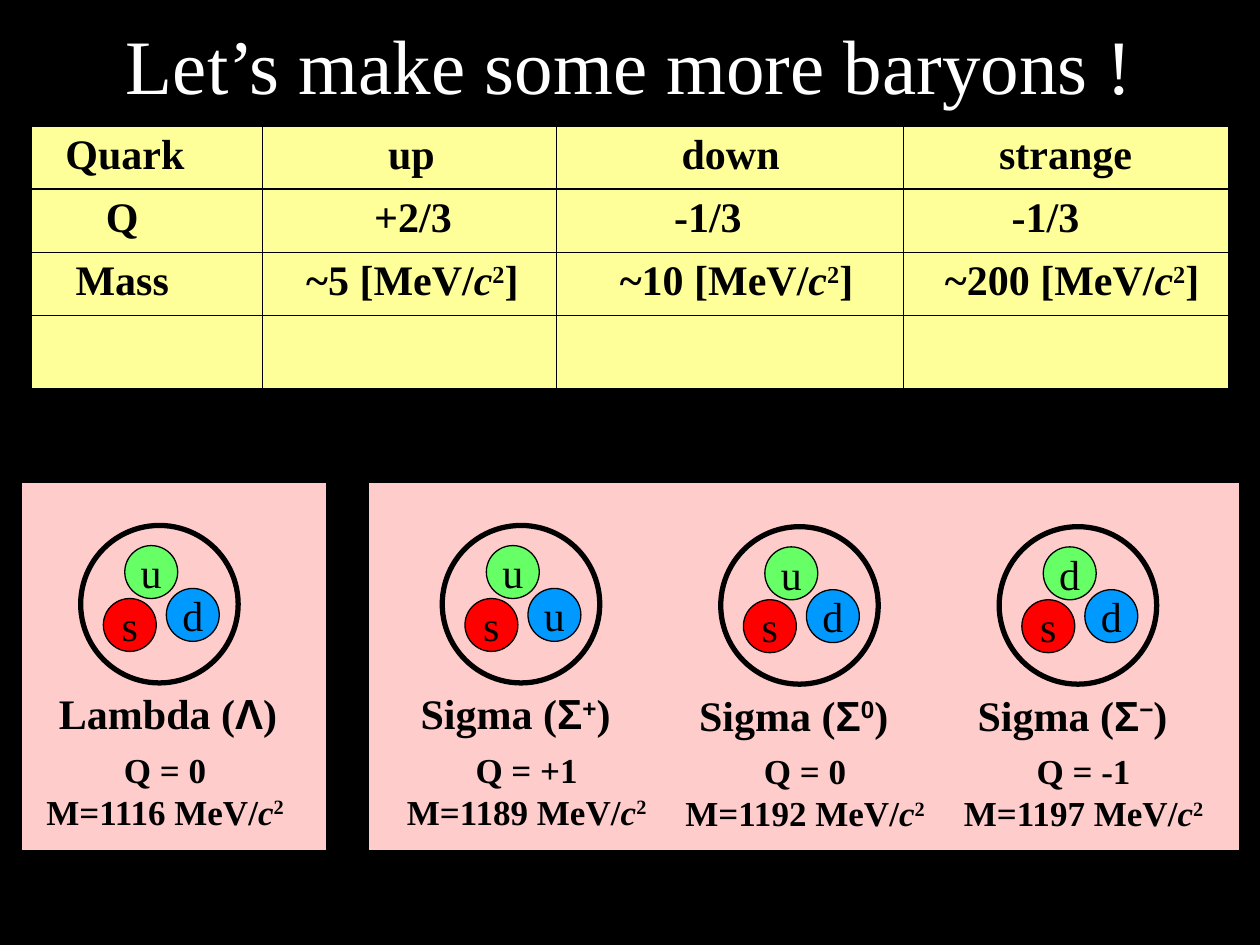
from dataclasses import dataclass

from lxml import etree
from pptx import Presentation
from pptx.dml.color import RGBColor
from pptx.enum.shapes import MSO_SHAPE
from pptx.enum.text import MSO_ANCHOR, MSO_AUTO_SIZE, PP_ALIGN
from pptx.oxml.ns import qn
from pptx.util import Inches, Pt

RECTANGLE, OVAL = MSO_SHAPE.RECTANGLE, MSO_SHAPE.OVAL
LEFT, CENTER = PP_ALIGN.LEFT, PP_ALIGN.CENTER
TOP, MIDDLE = MSO_ANCHOR.TOP, MSO_ANCHOR.MIDDLE
FIT_SHAPE = MSO_AUTO_SIZE.SHAPE_TO_FIT_TEXT
SERIF, SANS = "Times New Roman", "Arial"
BLACK, WHITE, PINK, YELLOW = "000000", "FFFFFF", "FFCCCC", "FFFF99"
RED, GREEN, BLUE = "FF0000", "66FF66", "0099FF"
RING_SIZE, QUARK_SIZE = 1.25, 0.42


@dataclass(frozen=True)
class TextRun:
    """A piece of text with its own font, slant and baseline."""
    text: str
    font: str = SERIF
    italic: bool = False
    superscript: bool = False


@dataclass(frozen=True)
class TextStyle:
    """Size, weight, colour and alignment shared by a block of text."""
    size: float
    bold: bool = True
    color: str = BLACK
    alignment: PP_ALIGN = LEFT


@dataclass(frozen=True)
class QuarkSpot:
    """Colour and offset of one quark inside the ring."""
    color: str
    dx: float
    dy: float


@dataclass(frozen=True)
class Baryon:
    """One baryon: ring corner, quarks, name, charge and mass."""
    left: float
    top: float
    quarks: str
    name: str
    symbol: str
    sign: str
    name_width: float
    charge: str
    mass: str


@dataclass(frozen=True)
class TableEntry:
    """Runs of one table cell and their indent."""
    runs: list[TextRun]
    indent: float


MASS_UNIT = [TextRun("c", italic=True), TextRun("2", superscript=True)]
QUARK_STYLE = TextStyle(24, bold=False, alignment=CENTER)
LABEL_STYLE = TextStyle(24)
CAPTION_STYLE = TextStyle(20, alignment=CENTER)
TITLE_STYLE = TextStyle(44, bold=False, color=WHITE, alignment=CENTER)

QUARK_SPOTS = [
    QuarkSpot(RED, 0.18, 0.58),
    QuarkSpot(GREEN, 0.35, 0.16),
    QuarkSpot(BLUE, 0.68, 0.5),
]
BARYONS = [
    Baryon(0.64, 4.17, "sud", "Lambda", "Λ", "", 1.94, "0", "1116"),
    Baryon(3.51, 4.17, "suu", "Sigma", "Σ", "+", 1.72, "+1", "1189"),
    Baryon(5.72, 4.18, "sud", "Sigma", "Σ", "0", 1.7, "0", "1192"),
    Baryon(7.93, 4.18, "sdd", "Sigma", "Σ", "−", 1.72, "-1", "1197"),
]
PANELS = [(0.17, 2.42), (2.92, 6.92)]
COLUMN_WIDTHS = [1.83, 2.34, 2.75, 2.58]
ROW_HEIGHTS = [0.5, 0.5, 0.5, 0.58]


def plain_entry(text: str, indent: float) -> TableEntry:
    """Make a table entry with a single run."""
    return TableEntry([TextRun(text)], indent)


def mass_entry(value: str, indent: float) -> TableEntry:
    """Make a table entry for a quark mass."""
    return TableEntry([TextRun(f"~{value} [MeV/"), *MASS_UNIT, TextRun("]")], indent)


TABLE_ROWS = [
    [plain_entry("Quark", 0.27), plain_entry("up", 1), plain_entry("down", 0.99), plain_entry("strange", 0.76)],
    [plain_entry("Q", 0.59), plain_entry("+2/3", 0.89), plain_entry("-1/3", 0.93), plain_entry("-1/3", 0.86)],
    [plain_entry("Mass", 0.35), mass_entry("5", 0.35), mass_entry("10", 0.5), mass_entry("200", 0.33)],
]


def paint(color_holder, color: str) -> None:
    """Give a fill a solid colour."""
    color_holder.solid()
    color_holder.fore_color.rgb = RGBColor.from_string(color)


def write_lines(text_frame, lines: list[list[TextRun]], style: TextStyle) -> None:
    """Write runs into the first paragraph, with breaks between lines."""
    paragraph = text_frame.paragraphs[0]
    paragraph.alignment = style.alignment
    for index, line in enumerate(lines):
        if index:
            paragraph.add_line_break()
        for piece in line:
            run = paragraph.add_run()
            run.text = piece.text
            run.font.name = piece.font
            run.font.size = Pt(style.size)
            run.font.bold = style.bold
            run.font.italic = piece.italic
            paint(run.font.fill, style.color)
            if piece.superscript:
                run._r.get_or_add_rPr().set("baseline", "30000")


def add_panel_shape(slide, kind, left: float, top: float, width: float, height: float,
                    fill: str | None, line_width: float = 0.75):
    """Add a black-outlined shape, unfilled if no colour is given."""
    shape = slide.shapes.add_shape(kind, Inches(left), Inches(top), Inches(width), Inches(height))
    shape.shadow.inherit = False
    if fill:
        paint(shape.fill, fill)
    else:
        shape.fill.background()
    paint(shape.line.fill, BLACK)
    shape.line.width = Pt(line_width)
    return shape


def add_text(slide, left: float, top: float, width: float, height: float,
             lines: list[list[TextRun]], style: TextStyle):
    """Add an unwrapped text box that fits its text."""
    box = slide.shapes.add_textbox(Inches(left), Inches(top), Inches(width), Inches(height))
    box.text_frame.word_wrap = False
    box.text_frame.auto_size = FIT_SHAPE
    write_lines(box.text_frame, lines, style)
    return box


def add_baryon(slide, baryon: Baryon) -> None:
    """Draw the quarks, ring, name and caption of a baryon."""
    left, top = baryon.left, baryon.top
    for quark, spot in zip(baryon.quarks, QUARK_SPOTS):
        circle = add_panel_shape(slide, OVAL, left + spot.dx, top + spot.dy, QUARK_SIZE, QUARK_SIZE, spot.color)
        circle.text_frame.word_wrap = False
        circle.text_frame.vertical_anchor = MIDDLE
        write_lines(circle.text_frame, [[TextRun(quark)]], QUARK_STYLE)
    add_panel_shape(slide, OVAL, left, top, RING_SIZE, RING_SIZE, None, 3)
    name = [TextRun(f"{baryon.name} ("), TextRun(baryon.symbol, SANS)]
    if baryon.sign:
        name.append(TextRun(baryon.sign, SANS, superscript=True))
    name.append(TextRun(")"))
    add_text(slide, left - 0.27, top + 1.24, baryon.name_width, 0.5, [name], LABEL_STYLE)
    caption = [[TextRun(f"Q = {baryon.charge}")], [TextRun(f"M={baryon.mass} MeV/"), *MASS_UNIT]]
    add_text(slide, left - 0.39, top + 1.72, 2.12, 0.77, caption, CAPTION_STYLE)


def format_cell(cell) -> None:
    """Give a cell thin black borders and a yellow fill."""
    properties = cell._tc.get_or_add_tcPr()
    for side in ("a:lnL", "a:lnR", "a:lnT", "a:lnB"):
        border = etree.SubElement(properties, qn(side), w=str(Pt(0.75)))
        solid = etree.SubElement(border, qn("a:solidFill"))
        etree.SubElement(solid, qn("a:srgbClr"), val=BLACK)
    paint(cell.fill, YELLOW)


def add_quark_table(slide) -> None:
    """Add the table of quark charges and masses."""
    table = slide.shapes.add_table(len(ROW_HEIGHTS), len(COLUMN_WIDTHS), Inches(0.25), Inches(1),
                                   Inches(sum(COLUMN_WIDTHS)), Inches(sum(ROW_HEIGHTS))).table
    table.first_row = table.horz_banding = False
    for column, width in zip(table.columns, COLUMN_WIDTHS):
        column.width = Inches(width)
    for row, height in zip(table.rows, ROW_HEIGHTS):
        row.height = Inches(height)
    for cell in table.iter_cells():
        format_cell(cell)
    for row, entries in zip(table.rows, TABLE_ROWS):
        for cell, entry in zip(row.cells, entries):
            cell.vertical_anchor = TOP
            cell.margin_left, cell.margin_right = Inches(entry.indent), Inches(0)
            write_lines(cell.text_frame, [entry.runs], LABEL_STYLE)


def main() -> None:
    """Build the baryon slide and save it."""
    presentation = Presentation()
    presentation.slide_width, presentation.slide_height = Inches(10), Inches(7.5)
    slide = presentation.slides.add_slide(presentation.slide_layouts[6])
    paint(slide.background.fill, BLACK)
    for left, width in PANELS:
        add_panel_shape(slide, RECTANGLE, left, 3.83, width, 2.92, PINK)
    title = slide.shapes.add_textbox(Inches(0.75), Inches(0.17), Inches(8.5), Inches(0.67))
    title.text_frame.word_wrap = True
    title.text_frame.vertical_anchor = MIDDLE
    write_lines(title.text_frame, [[TextRun("Let’s make some more baryons !")]], TITLE_STYLE)
    for baryon in BARYONS:
        add_baryon(slide, baryon)
    add_quark_table(slide)
    presentation.save("out.pptx")


if __name__ == "__main__":
    main()
